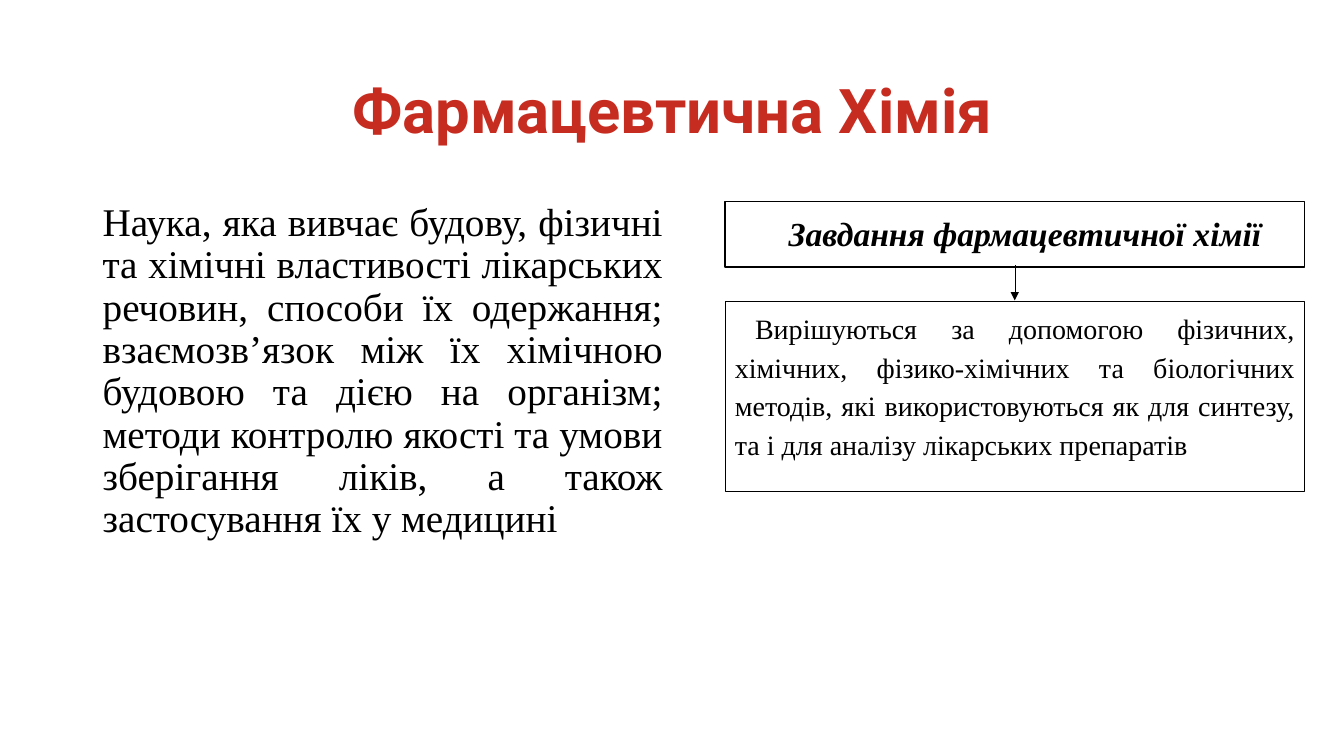
from pptx import Presentation
from pptx.dml.color import RGBColor
from pptx.enum.shapes import MSO_CONNECTOR, MSO_SHAPE
from pptx.enum.text import MSO_ANCHOR, PP_ALIGN
from pptx.oxml.ns import qn
from pptx.util import Inches, Pt
from lxml import etree

RECT = MSO_SHAPE.RECTANGLE
LINE = MSO_CONNECTOR.STRAIGHT
TOP, MIDDLE = MSO_ANCHOR.TOP, MSO_ANCHOR.MIDDLE
CENTER, JUSTIFY = PP_ALIGN.CENTER, PP_ALIGN.JUSTIFY
SERIF, SANS = "Times New Roman", "Roboto"
BLACK, WHITE, RED = "000000", "FFFFFF", "C72C21"

# Grid: two equal columns
LEFT, RIGHT, COL = 0.92, 7.19, 5.75


def color(code):
    return RGBColor.from_string(code)


def write(shape, text, size, align, space, face=SERIF, ink=BLACK, bold=False, anchor=TOP):
    frame = shape.text_frame
    frame.word_wrap = True
    frame.vertical_anchor = anchor
    frame.text = text
    para = frame.paragraphs[0]
    para.alignment, para.line_spacing = align, space
    font = para.font
    font.name, font.size, font.bold = face, Pt(size), bold
    font.color.rgb = color(ink)
    return para


deck = Presentation()
deck.slide_width, deck.slide_height = Inches(13.33), Inches(7.5)
slide = deck.slides.add_slide(deck.slide_layouts[5])
shapes = slide.shapes

# Title
title = shapes.title
title.left, title.top = Inches(LEFT), Inches(0.4)
title.width, title.height = Inches(2 * COL), Inches(1.45)
write(title, "Фармацевтична Хімія", 44, CENTER, 0.9, SANS, RED, True, MIDDLE)

# Definition in the left column
body = shapes.add_textbox(Inches(LEFT), Inches(1.96), Inches(COL), Inches(4.8))
write(body, "Наука, яка вивчає будову, фізичні та хімічні властивості лікарських "
      "речовин, способи їх одержання; взаємозвʼязок між їх хімічною будовою та "
      "дією на організм; методи контролю якості та умови зберігання ліків, "
      "а також застосування їх у медицині", 28, JUSTIFY, 0.9)

# Task boxes in the right column: top, height, border, size, align, bold, text
boxes = [
    (2, 0.65, 1, 24, CENTER, True, "Завдання фармацевтичної хімії"),
    (2.99, 1.88, 0.25, 20, JUSTIFY, False,
     "Вирішуються за допомогою фізичних, хімічних, фізико-хімічних та "
     "біологічних методів, які використовуються як для синтезу, та і для "
     "аналізу лікарських препаратів"),
]
for top, height, border, size, align, bold, text in boxes:
    box = shapes.add_shape(RECT, Inches(RIGHT), Inches(top), Inches(COL), Inches(height))
    box.shadow.inherit = False
    box.fill.solid()
    box.fill.fore_color.rgb = color(WHITE)
    box.line.color.rgb = color(BLACK)
    box.line.width = Pt(border)
    para = write(box, text, size, align, 1.15, bold=bold)
    para.font.italic = bold
    para._p.get_or_add_pPr().set("indent", str(Inches(0.2)))

# Arrow between the boxes
mid = Inches(RIGHT + COL / 2)
arrow = shapes.add_connector(LINE, mid, Inches(2.63), mid, Inches(2.98))
arrow.line.color.rgb = color(BLACK)
arrow.line.width = Pt(0.25)
etree.SubElement(arrow.line._get_or_add_ln(), qn("a:tailEnd"), type="triangle")
etree.SubElement(arrow._element.spPr, qn("a:effectLst"))

deck.save("out.pptx")
